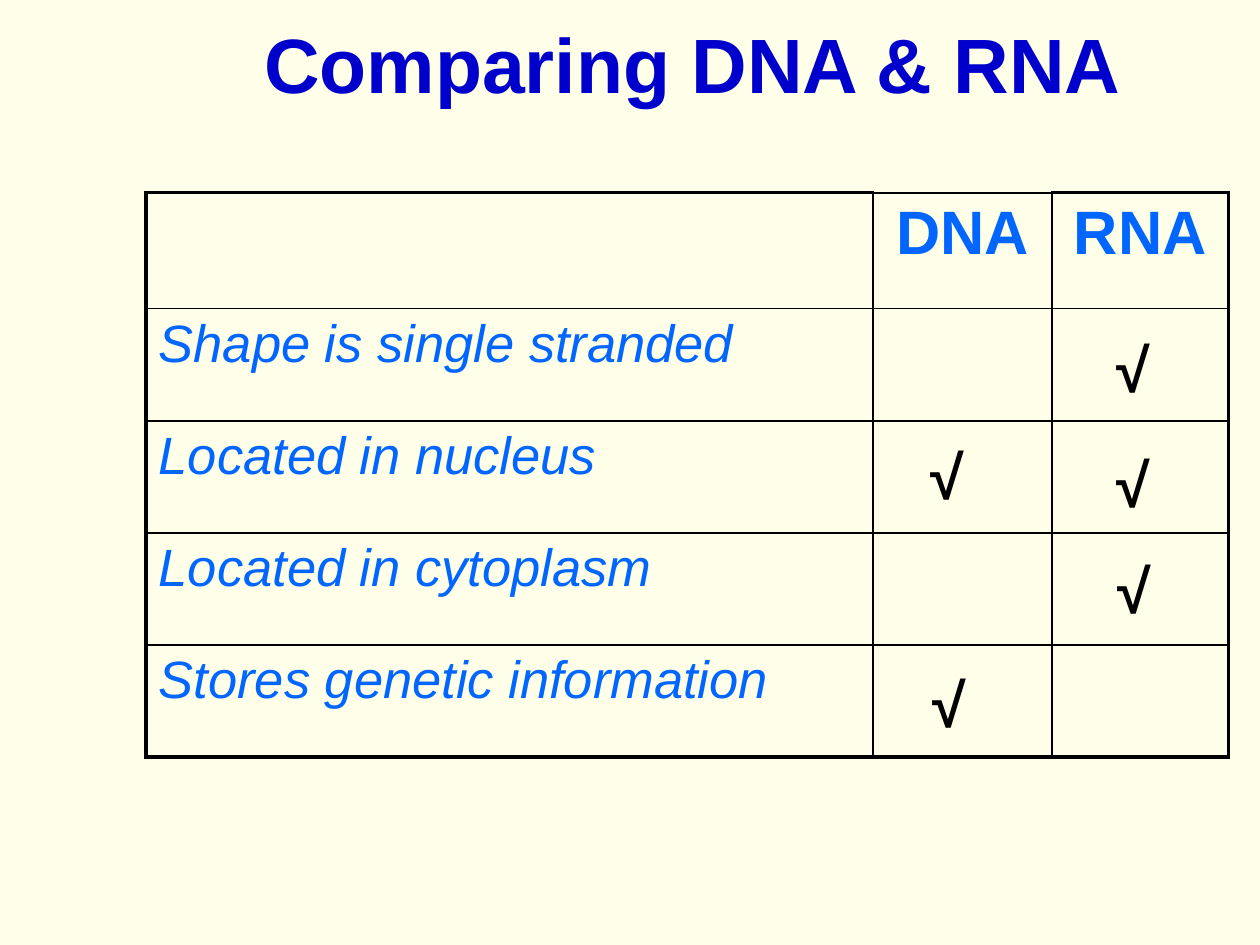
from dataclasses import dataclass

from lxml import etree
from pptx import Presentation
from pptx.dml.color import RGBColor
from pptx.enum.text import MSO_ANCHOR, MSO_AUTO_SIZE, PP_ALIGN
from pptx.oxml.ns import qn
from pptx.util import Inches, Pt

CENTER = PP_ALIGN.CENTER
LEFT = PP_ALIGN.LEFT
MIDDLE = MSO_ANCHOR.MIDDLE
TOP = MSO_ANCHOR.TOP
GROW = MSO_AUTO_SIZE.SHAPE_TO_FIT_TEXT


@dataclass(frozen=True)
class Theme:
    font: str = "Arial"
    background: str = "FFFFE9"
    title: str = "0000CC"
    label: str = "0066FF"
    ink: str = "000000"
    title_size: float = 44
    heading_size: float = 35
    label_size: float = 30
    outer_line: float = 2.25
    inner_line: float = 1


THEME = Theme()
COLUMNS = [5.77, 1.42, 1.4]
ROWS = [0.92] + [0.89] * 4
HEADINGS = ["DNA", "RNA"]
FEATURES = [
    "Shape is single stranded",
    "Located in nucleus",
    "Located in cytoplasm",
    "Stores genetic information",
]
# Left and top of each check mark
CHECKS = [(8.76, 2.58), (7.29, 3.43), (8.76, 3.49), (8.77, 4.33), (7.3, 5.24)]


def write(frame, text, size, color, bold=False, italic=False, align=LEFT):
    para = frame.paragraphs[0]
    para.text = text
    para.alignment = align
    font = para.font
    font.name = THEME.font
    font.size = Pt(size)
    font.bold = bold
    font.italic = italic
    font.color.rgb = RGBColor.from_string(color)


def add_text(page, box, text, size, color, align=LEFT, anchor=TOP):
    shape = page.shapes.add_textbox(*(Inches(length) for length in box))
    frame = shape.text_frame
    frame.word_wrap = True
    frame.vertical_anchor = anchor
    write(frame, text, size, color, bold=True, align=align)
    return frame


def set_borders(cell, widths):
    """Draw solid borders; widths maps a side (L, R, T, B) to points."""
    properties = cell._tc.get_or_add_tcPr()
    for position, (side, width) in enumerate(widths.items()):
        line = etree.Element(qn(f"a:ln{side}"), w=str(Pt(width)))
        fill = etree.SubElement(line, qn("a:solidFill"))
        etree.SubElement(fill, qn("a:srgbClr"), val=THEME.ink)
        properties.insert(position, line)


def add_comparison(page, box):
    frame = page.shapes.add_table(
        len(ROWS), len(COLUMNS), *(Inches(length) for length in box))
    table = frame.table
    table.first_row = False
    table.horz_banding = False
    for column, width in zip(table.columns, COLUMNS):
        column.width = Inches(width)
    for row, height in zip(table.rows, ROWS):
        row.height = Inches(height)

    # Headings and features
    for index, heading in enumerate(HEADINGS, 1):
        write(table.cell(0, index).text_frame, heading, THEME.heading_size,
              THEME.label, bold=True, align=CENTER)
    for index, feature in enumerate(FEATURES, 1):
        write(table.cell(index, 0).text_frame, feature, THEME.label_size,
              THEME.label, italic=True)

    # Heavy outline, left thin above the DNA heading
    last_row, last_column = len(ROWS) - 1, len(COLUMNS) - 1
    for r in range(len(ROWS)):
        for c in range(len(COLUMNS)):
            cell = table.cell(r, c)
            cell.fill.background()
            outer = {
                "L": c == 0,
                "R": c == last_column,
                "T": r == 0 and c != 1,
                "B": r == last_row,
            }
            set_borders(cell, {
                side: THEME.outer_line if heavy else THEME.inner_line
                for side, heavy in outer.items()})


def add_check(page, box):
    frame = add_text(page, box, "√", THEME.heading_size, THEME.ink)
    frame.auto_size = GROW


def main():
    deck = Presentation()
    deck.slide_width = Inches(10)
    deck.slide_height = Inches(7.5)
    page = deck.slides.add_slide(deck.slide_layouts[6])
    background = page.background.fill
    background.solid()
    background.fore_color.rgb = RGBColor.from_string(THEME.background)

    # Table, check marks over it, title
    add_comparison(page, (1.16, 1.53, sum(COLUMNS), sum(ROWS)))
    for left, top in CHECKS:
        add_check(page, (left, top, 0.58, 0.68))
    add_text(page, (1, 0.12, 9, 0.75), "Comparing DNA & RNA",
             THEME.title_size, THEME.title, align=CENTER, anchor=MIDDLE)

    deck.save("out.pptx")


if __name__ == "__main__":
    main()
